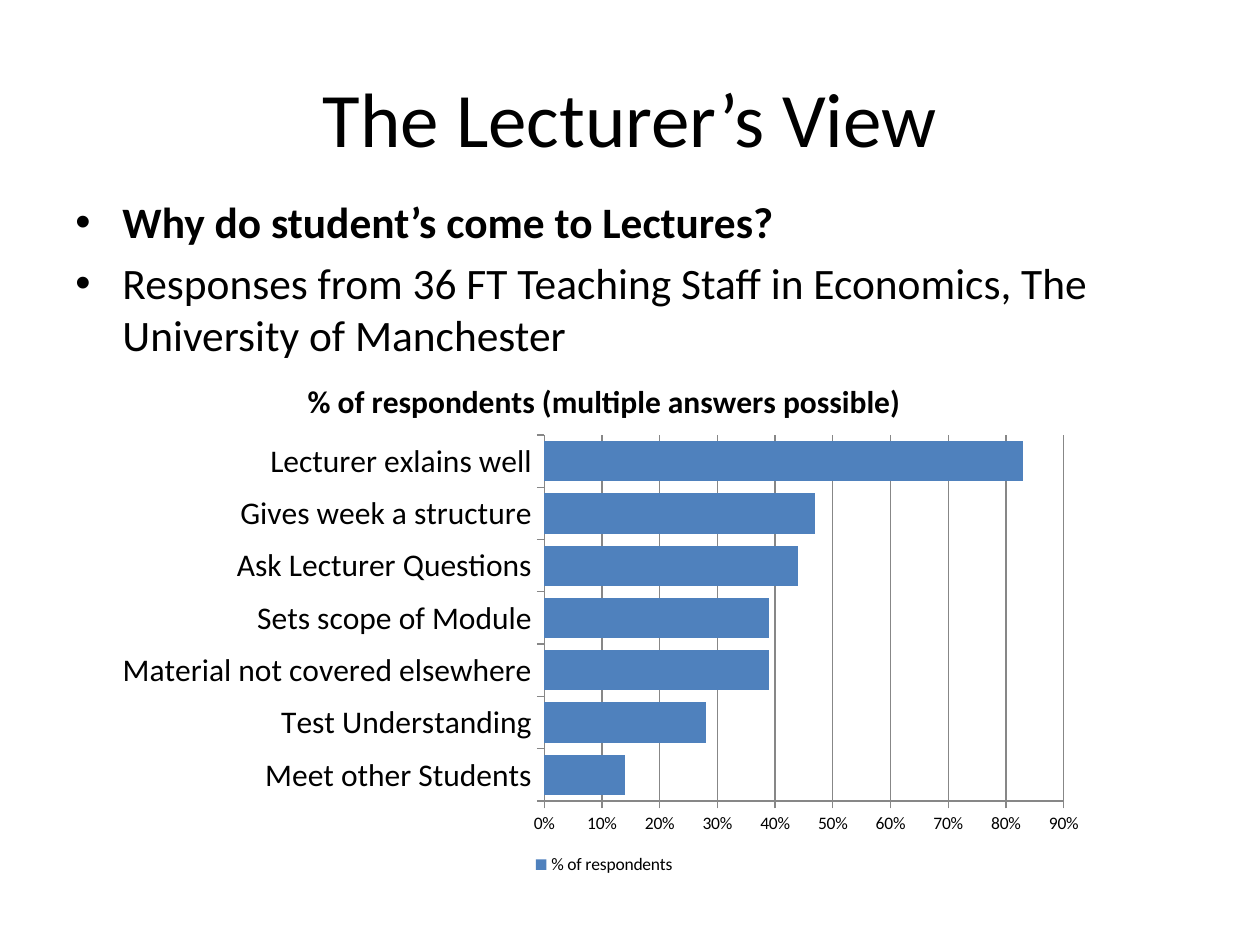
from lxml import etree
from pptx import Presentation
from pptx import util as u
from pptx.chart.data import CategoryChartData
from pptx.dml.color import RGBColor
from pptx.enum import chart as ch, text
from pptx.oxml import parse_xml
from pptx.oxml.ns import nsdecls, qn

BLACK = RGBColor(0x00, 0x00, 0x00)
BLUE = RGBColor(0x4F, 0x81, 0xBD)
GREY = RGBColor(0x87, 0x87, 0x87)
FONT = "Calibri"


def set_font(font, size, bold=False):
    font.name = FONT
    font.size = u.Pt(size)
    font.bold = bold
    font.color.rgb = BLACK


def add_text_frame(top, anchor):
    """Add a text box as wide as the slide's content area."""
    box = slide.shapes.add_textbox(u.Cm(1.27), u.Cm(top), u.Cm(22.86), u.Cm(3.18))
    frame = box.text_frame
    frame.word_wrap = True
    frame.vertical_anchor = anchor
    return frame


presentation = Presentation()
presentation.slide_width = u.Cm(25.4)
presentation.slide_height = u.Cm(19.05)
slide = presentation.slides.add_slide(presentation.slide_layouts[6])

# Title
title = add_text_frame(0.76, text.MSO_ANCHOR.MIDDLE).paragraphs[0]
title.text = "The Lecturer’s View"
title.alignment = text.PP_ALIGN.CENTER
set_font(title.font, 44)

# Bullets
body = add_text_frame(3.81, text.MSO_ANCHOR.TOP)
bullets = [
    ("Why do student’s come to Lectures?", True),
    ("Responses from 36 FT Teaching Staff in Economics, The University of Manchester", False),
]
for index, (wording, bold) in enumerate(bullets):
    paragraph = body.add_paragraph() if index else body.paragraphs[0]
    paragraph.text = wording
    paragraph.space_before = u.Pt(5)
    set_font(paragraph.font, 24.8, bold)
    properties = paragraph._p.get_or_add_pPr()
    properties.set("marL", str(u.Cm(0.95)))
    properties.set("indent", str(-u.Cm(0.95)))
    bullet_font = parse_xml(f'<a:buFont {nsdecls("a")} typeface="Arial"/>')
    bullet = parse_xml(f'<a:buChar {nsdecls("a")} char="•"/>')
    default_run = properties.find(qn("a:defRPr"))
    default_run.addprevious(bullet_font)
    default_run.addprevious(bullet)

# Chart, with categories listed from the bottom up
responses = {
    "Meet other Students": 0.14,
    "Test Understanding": 0.28,
    "Material not covered elsewhere": 0.39,
    "Sets scope of Module": 0.39,
    "Ask Lecturer Questions": 0.44,
    "Gives week a structure": 0.47,
    "Lecturer exlains well": 0.83,
}
data = CategoryChartData(number_format="0%")
data.categories = list(responses)
data.add_series("% of respondents", list(responses.values()))
chart = slide.shapes.add_chart(
    ch.XL_CHART_TYPE.BAR_CLUSTERED,
    u.Cm(2.11), u.Cm(7.19), u.Cm(20.14), u.Cm(10.54), data,
).chart
set_font(chart.font, 10)

chart.has_title = True
chart_title = chart.chart_title.text_frame.paragraphs[0]
chart_title.text = "% of respondents (multiple answers possible)"
set_font(chart_title.font, 18, True)
chart.chart_title.include_in_layout = False

chart.has_legend = True
chart.legend.position = ch.XL_LEGEND_POSITION.BOTTOM
chart.legend.include_in_layout = False
set_font(chart.legend.font, 10)

plot = chart.plots[0]
plot.gap_width = 30
plot.vary_by_categories = False
fill = plot.series[0].format.fill
fill.solid()
fill.fore_color.rgb = BLUE

value_axis = chart.value_axis
value_axis.minimum_scale = 0
value_axis.maximum_scale = 0.9
value_axis.major_unit = 0.1
value_axis.has_major_gridlines = True
value_axis.major_gridlines.format.line.color.rgb = GREY
value_axis.tick_labels.number_format = "0%"
value_axis.tick_labels.number_format_is_linked = False

for axis, size in ((chart.category_axis, 18), (value_axis, 10)):
    axis.major_tick_mark = ch.XL_TICK_MARK.OUTSIDE
    axis.format.line.color.rgb = GREY
    set_font(axis.tick_labels.font, size)

# Fixed inner plot area, as fractions of the chart
plot_area = chart._chartSpace.chart.plotArea
for old_layout in plot_area.findall(qn("c:layout")):
    plot_area.remove(old_layout)
layout = parse_xml(f'<c:layout {nsdecls("c")}><c:manualLayout/></c:layout>')
settings = [("layoutTarget", "inner"), ("xMode", "edge"), ("yMode", "edge"),
            ("x", "0.44"), ("y", "0.15"), ("w", "0.52"), ("h", "0.7")]
for name, value in settings:
    etree.SubElement(layout[0], qn(f"c:{name}")).set("val", value)
plot_area.insert(0, layout)

presentation.save("out.pptx")
